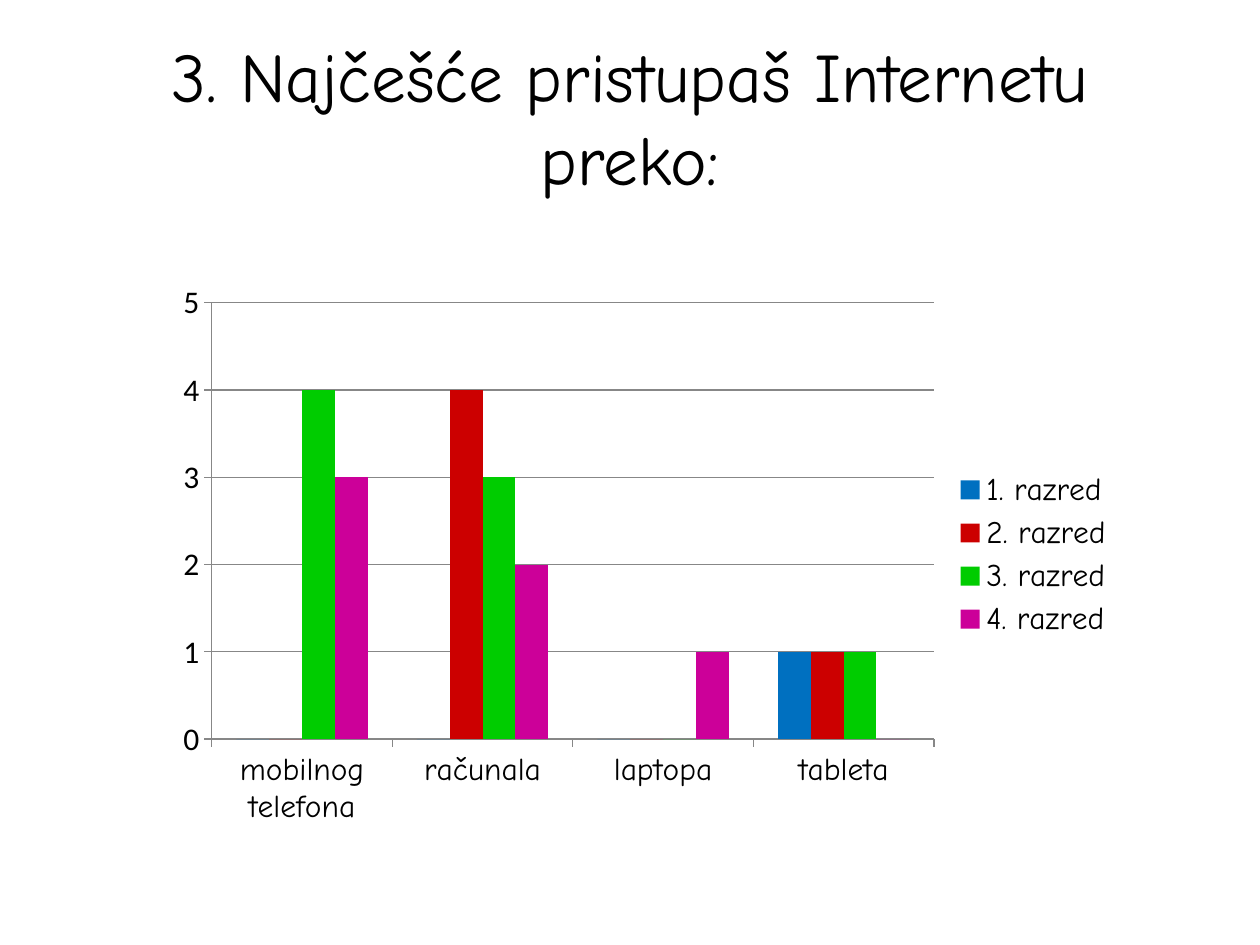
from dataclasses import dataclass

from lxml.etree import SubElement
from pptx import Presentation
from pptx.chart.data import CategoryChartData
from pptx.dml.color import RGBColor
from pptx.enum.chart import XL_CHART_TYPE as ChartType
from pptx.enum.chart import XL_LEGEND_POSITION as LegendPosition
from pptx.enum.chart import XL_TICK_MARK as TickMark
from pptx.enum.text import MSO_ANCHOR as Anchor
from pptx.enum.text import MSO_AUTO_SIZE as AutoSize
from pptx.enum.text import PP_ALIGN as Align
from pptx.oxml.ns import qn
from pptx.util import Cm, Pt

BLACK = RGBColor(0x00, 0x00, 0x00)
GRAY = RGBColor(0x87, 0x87, 0x87)
BLUE = RGBColor(0x00, 0x70, 0xC0)
RED = RGBColor(0xCC, 0x00, 0x00)
GREEN = RGBColor(0x00, 0xCC, 0x00)
MAGENTA = RGBColor(0xCC, 0x00, 0x99)

HAND_FONT = "Comic Neue"
CHART_FONT = "Calibri"


@dataclass(frozen=True)
class Grade:
    name: str
    answers: tuple[int, ...]
    color: RGBColor


DEVICES = ("mobilnog telefona", "računala", "laptopa", "tableta")
GRADES = (
    Grade("1. razred", (0, 0, 0, 1), BLUE),
    Grade("2. razred", (0, 4, 0, 1), RED),
    Grade("3. razred", (4, 3, 0, 1), GREEN),
    Grade("4. razred", (3, 2, 1, 0), MAGENTA),
)


def format_font(font, name: str, size: float, color: RGBColor = BLACK) -> None:
    font.name = name
    font.size = Pt(size)
    font.bold = False
    font.color.rgb = color


def write_text(shape, text: str, *, font: str, size: float, align: Align, anchor: Anchor) -> None:
    frame = shape.text_frame
    frame.word_wrap = True
    frame.auto_size = AutoSize.NONE
    frame.vertical_anchor = anchor
    paragraph = frame.paragraphs[0]
    paragraph.alignment = align
    run = paragraph.add_run()
    run.text = text
    format_font(run.font, font, size)


def style_axis(axis, font: str) -> None:
    axis.major_tick_mark = TickMark.OUTSIDE
    axis.minor_tick_mark = TickMark.NONE
    axis.format.line.color.rgb = GRAY
    axis.format.line.width = Pt(0.75)
    format_font(axis.tick_labels.font, font, 18)


def place_plot(chart, x: float, y: float, width: float, height: float) -> None:
    plot_area = chart.plots[0]._element.getparent()
    layout = plot_area.find(qn("c:layout"))
    if layout is None:
        layout = SubElement(plot_area, qn("c:layout"))
        plot_area.insert(0, layout)
    manual = SubElement(layout, qn("c:manualLayout"))
    settings = {"layoutTarget": "inner", "xMode": "edge", "yMode": "edge",
                "x": x, "y": y, "w": width, "h": height}
    for tag, value in settings.items():
        SubElement(manual, qn(f"c:{tag}")).set("val", str(value))


def add_answer_chart(slide, devices: tuple[str, ...], grades: tuple[Grade, ...]) -> None:
    data = CategoryChartData(number_format="General")
    data.categories = devices
    for grade in grades:
        data.add_series(grade.name, grade.answers)
    chart = slide.shapes.add_chart(
        ChartType.COLUMN_CLUSTERED, Cm(3.3), Cm(5.54), Cm(19.41), Cm(11.28), data
    ).chart
    chart.has_title = False
    format_font(chart.font, CHART_FONT, 18)

    plot = chart.plots[0]
    plot.gap_width = 150
    plot.overlap = 0
    plot.vary_by_categories = False
    for series, grade in zip(plot.series, grades):
        series.format.fill.solid()
        series.format.fill.fore_color.rgb = grade.color

    style_axis(chart.category_axis, HAND_FONT)
    value_axis = chart.value_axis
    style_axis(value_axis, CHART_FONT)
    value_axis.minimum_scale = 0
    value_axis.maximum_scale = 5
    value_axis.major_unit = 1
    value_axis.has_major_gridlines = True
    gridline = value_axis.major_gridlines.format.line
    gridline.color.rgb = GRAY
    gridline.width = Pt(0.75)

    chart.has_legend = True
    chart.legend.position = LegendPosition.RIGHT
    chart.legend.include_in_layout = False
    format_font(chart.legend.font, HAND_FONT, 18)
    place_plot(chart, 0.05, 0.05, 0.75, 0.78)


def main() -> None:
    presentation = Presentation()
    presentation.slide_width = Cm(25.4)
    presentation.slide_height = Cm(19.05)
    slide = presentation.slides.add_slide(presentation.slide_layouts[5])

    title = slide.shapes.title
    title.left, title.top, title.width, title.height = Cm(1.27), Cm(0.76), Cm(22.86), Cm(3.18)
    write_text(title, "3. Najčešće pristupaš Internetu preko:", font=HAND_FONT, size=39.6,
               align=Align.CENTER, anchor=Anchor.MIDDLE)
    add_answer_chart(slide, DEVICES, GRADES)
    presentation.save("out.pptx")


if __name__ == "__main__":
    main()
